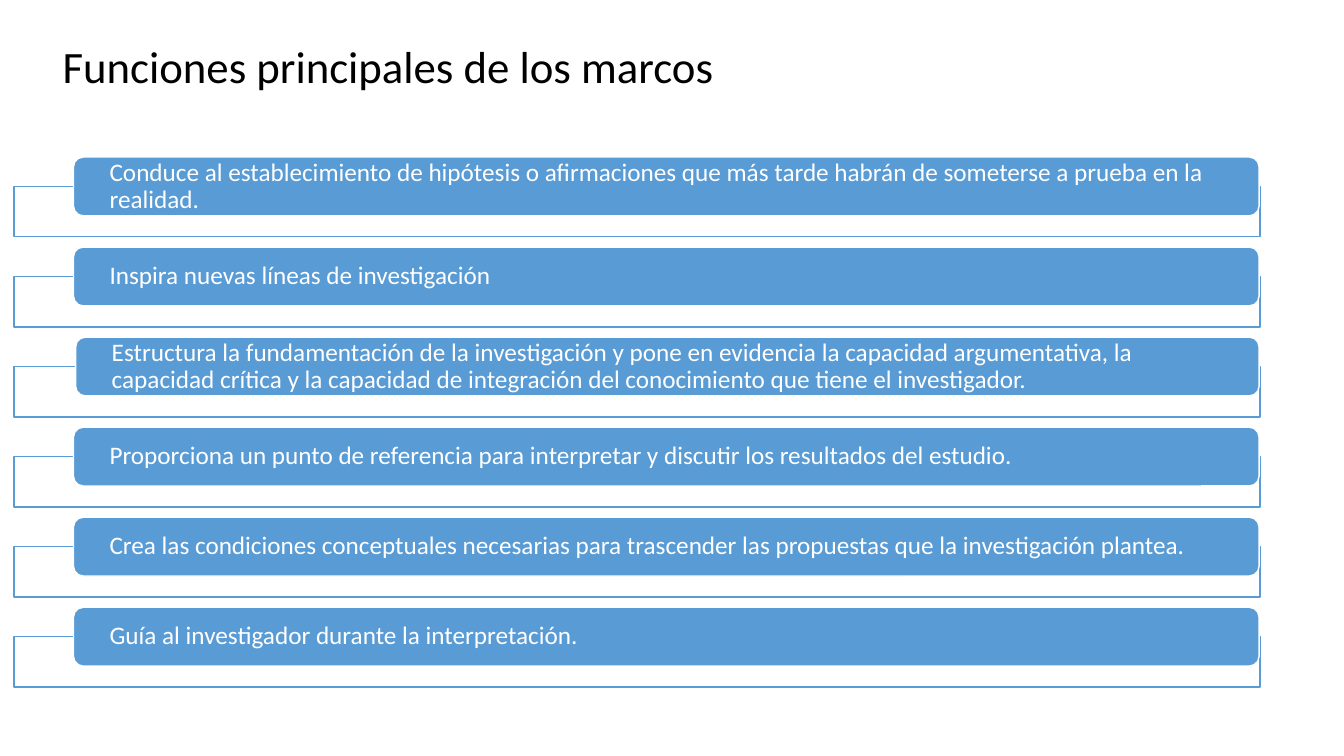
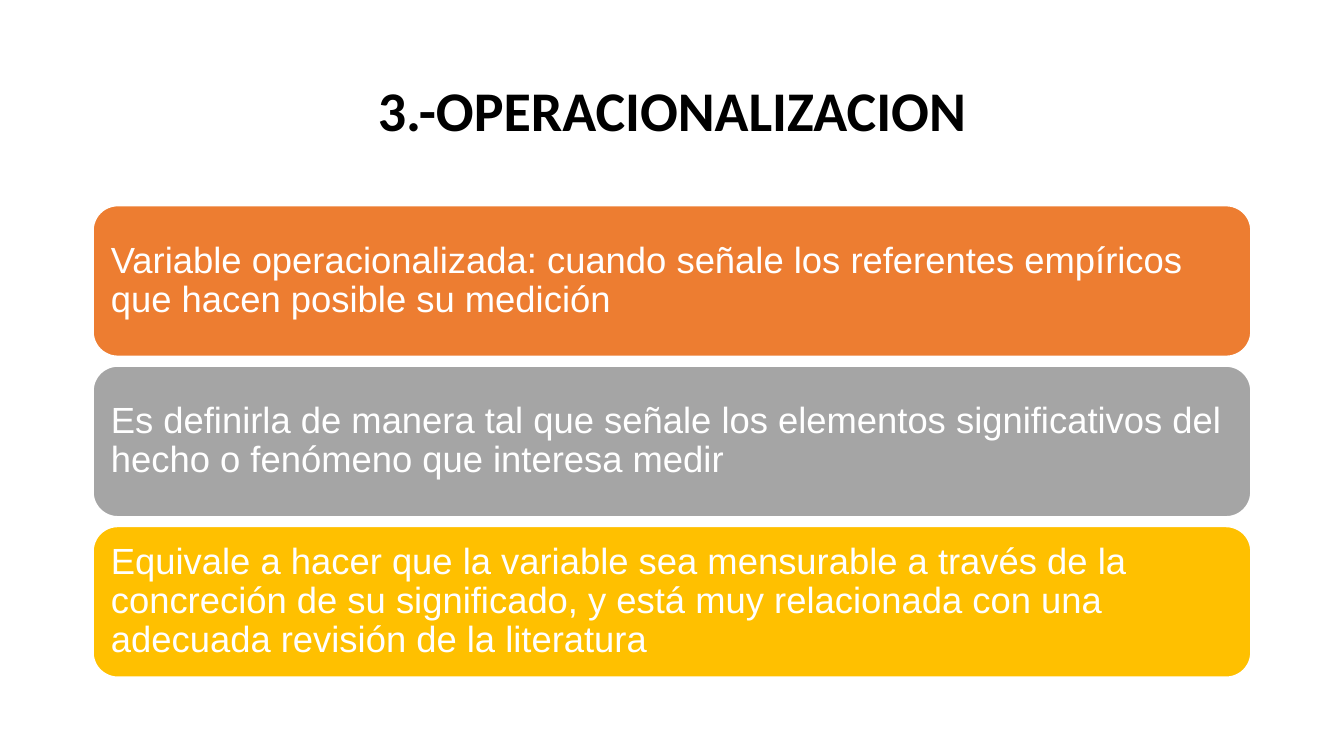
import pptx
import pptx.dml.color
import pptx.enum.shapes
import pptx.enum.text
import pptx.oxml.ns
import pptx.util
from lxml import etree

COLORS = {
    "white": "FFFFFF",
    "black": "000000",
    "blue": "599BD5",
    "orange": "ED7D31",
    "gray": "A5A5A5",
    "gold": "FFC000",
}
COLUMNS, ROWS = 160, 90
SHAPE = pptx.enum.shapes.MSO_SHAPE
ALIGN = pptx.enum.text.PP_ALIGN

FUNCTIONS = [
    "Conduce al establecimiento de hipótesis o afirmaciones que más tarde habrán de someterse a prueba en la realidad.",
    "Inspira nuevas líneas de investigación",
    "Estructura la fundamentación de la investigación y pone en evidencia la capacidad argumentativa, la capacidad crítica y la capacidad de integración del conocimiento que tiene el investigador.",
    "Proporciona un punto de referencia para interpretar y discutir los resultados del estudio.",
    "Crea las condiciones conceptuales necesarias para trascender las propuestas que la investigación plantea.",
    "Guía al investigador durante la interpretación.",
]
DEFINITIONS = [
    ("orange", "Variable operacionalizada: cuando señale los referentes empíricos que hacen posible su medición"),
    ("gray", "Es definirla de manera tal que señale los elementos significativos del hecho o fenómeno que interesa medir"),
    ("gold", "Equivale a hacer que la variable sea mensurable a través de la concreción de su significado, y está muy relacionada con una adecuada revisión de la literatura"),
]


def rgb(name):
    return pptx.dml.color.RGBColor.from_string(COLORS[name])


def write(tf, text, size, font="Calibri", color="white", bold=False,
          align=ALIGN.LEFT, insets=(0.1, 0.05)):
    tf.word_wrap = True
    tf.auto_size = pptx.enum.text.MSO_AUTO_SIZE.NONE
    tf.vertical_anchor = pptx.enum.text.MSO_ANCHOR.MIDDLE
    tf.margin_left = tf.margin_right = pptx.util.Inches(insets[0])
    tf.margin_top = tf.margin_bottom = pptx.util.Inches(insets[1])
    p = tf.paragraphs[0]
    p.alignment = align
    p.line_spacing = 0.9
    r = p.add_run()
    r.text = text
    r.font.name = font
    r.font.size = pptx.util.Pt(size)
    r.font.bold = bold
    r.font.color.rgb = rgb(color)


class Deck:
    def __init__(self):
        self.prs = pptx.Presentation()
        self.prs.slide_width = pptx.util.Inches(13.333)
        self.prs.slide_height = pptx.util.Inches(7.5)
        self.slide = None

    def box(self, col, row, cols, rows):
        x, y = self.prs.slide_width / COLUMNS, self.prs.slide_height / ROWS
        return [round(v) for v in (col * x, row * y, cols * x, rows * y)]

    def add_slide(self, title, area, **fmt):
        self.slide = self.prs.slides.add_slide(self.prs.slide_layouts[5])
        sp = self.slide.shapes.title
        sp.left, sp.top, sp.width, sp.height = self.box(*area)
        write(sp.text_frame, title, color="black", **fmt)

    def shape(self, kind, area, fill, line, width):
        sp = self.slide.shapes.add_shape(kind, *self.box(*area))
        sp.shadow.inherit = False
        sp.fill.solid()
        sp.fill.fore_color.rgb = rgb(fill)
        sp.line.color.rgb = rgb(line)
        sp.line.width = pptx.util.Pt(width)
        return sp

    def frame(self, area):
        sp = self.shape(SHAPE.RECTANGLE, area, "white", "blue", 1)
        color = sp.fill._xPr.find(".//" + pptx.oxml.ns.qn("a:srgbClr"))
        etree.SubElement(color, pptx.oxml.ns.qn("a:alpha"), val="90000")

    def bar(self, text, area, fill, width, **fmt):
        sp = self.shape(SHAPE.ROUNDED_RECTANGLE, area, fill, "white", width)
        sp.adjustments[0] = 0.1667
        write(sp.text_frame, text, **fmt)


def main():
    deck = Deck()

    deck.add_slide("Funciones principales de los marcos", (6.25, 3.7, 105.6, 9.1), size=32)
    right, pitch = 149.9, 10.72
    for i, text in enumerate(FUNCTIONS):
        left = 9 if i == 2 else 8.75
        deck.frame((1.65, 22.2 + i * pitch, 148.35, 6))
        deck.bar(text, (left, 18.7 + i * pitch, right - left, 7), "blue", 1,
                 size=18, insets=(0.33, 0))

    deck.add_slide("3.-OPERACIONALIZACION", (11, 4.8, 138, 17.4),
                   size=40, bold=True, align=ALIGN.CENTER)
    for i, (fill, text) in enumerate(DEFINITIONS):
        deck.bar(text, (11, 24.4 + i * 19.1, 138, 18.1), fill, 2,
                 size=26, font="Arial", insets=(0.11, 0.11))

    deck.prs.save("out.pptx")


if __name__ == "__main__":
    main()
